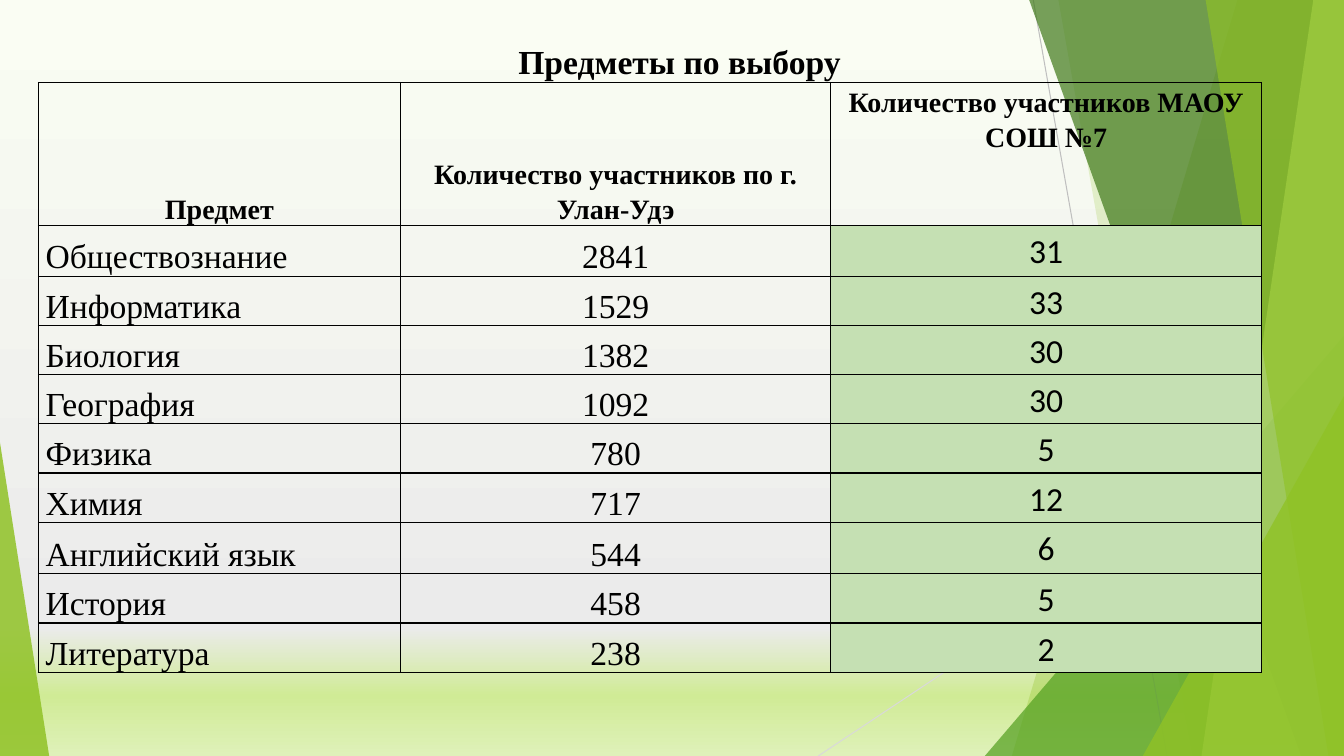
import pptx
import pptx.util
import pptx.dml.color
import pptx.enum.shapes
import pptx.enum.text
import pptx.oxml
import pptx.oxml.ns
import lxml.etree

Cm = pptx.util.Cm
Pt = pptx.util.Pt
RGB = pptx.dml.color.RGBColor.from_string
ALIGN = pptx.enum.text.PP_ALIGN
ANCHOR = pptx.enum.text.MSO_ANCHOR
qn = pptx.oxml.ns.qn

COLORS = {
    "text": "000000", "border": "000000", "school": "C5E0B3",
    "lime": "90C226", "green": "54A021", "forest": "3F7819", "pale": "C0E474",
    "steep line": "BFBFBF", "flat line": "D9D9D9",
}
BACKGROUND_STOPS = [(0, "FAFDF3"), (83, "EBEBEB"), (92, "D0EB96"), (100, "DFF1B9")]
WIDTH, HEIGHT = 33.87, 19.05


def paint(shape, color, opacity):
    shape.shadow.inherit = False
    shape.fill.solid()
    shape.fill.fore_color.rgb = RGB(COLORS[color])
    shape.line.fill.background()
    srgb = shape.fill._xPr.find(".//" + qn("a:srgbClr"))
    lxml.etree.SubElement(srgb, qn("a:alpha"), val=str(opacity * 1000))


def write(paragraph, text, size, font, bold, align):
    paragraph.alignment = align
    paragraph.line_spacing = 1.15
    run = paragraph.add_run()
    run.text = text
    run.font.color.rgb = RGB(COLORS["text"])
    for name, value in {"size": Pt(size), "name": font, "bold": bold}.items():
        setattr(run.font, name, value)


presentation = pptx.Presentation()
presentation.slide_width = Cm(WIDTH)
presentation.slide_height = Cm(HEIGHT)
slide = presentation.slides.add_slide(presentation.slide_layouts[5])
shapes = slide.shapes

background = slide.background.fill
background.gradient()
background.gradient_angle = 270
stop_list = background._xPr.find(".//" + qn("a:gsLst"))
for stop in list(stop_list):
    stop_list.remove(stop)
for position, color in BACKGROUND_STOPS:
    stop = lxml.etree.SubElement(stop_list, qn("a:gs"), pos=str(position * 1000))
    lxml.etree.SubElement(stop, qn("a:srgbClr"), val=color)

for start_x, start_y, end_x, color in [
    (26.04, 0, 29.41, "steep line"),
    (WIDTH, 10.24, 20.62, "flat line"),
]:
    line = shapes.add_connector(
        pptx.enum.shapes.MSO_CONNECTOR.STRAIGHT,
        Cm(start_x), Cm(start_y), Cm(end_x), Cm(HEIGHT))
    line.line.color.rgb = RGB(COLORS[color])
    line.line.width = Pt(0.75)
    lxml.etree.SubElement(line._element.spPr, qn("a:effectLst"))

FACETS = [
    ("band", (31.19, 25.5), "lime", 30),
    ("band", (26.67, 30.05), "lime", 20),
    ("triangle", (24.82, 8.46, 9.05, 10.59, 1), "green", 72),
    ("band", (25.93, 32.79), "forest", 70),
    ("band", (33.1, 30.28), "pale", 70),
    ("band", (30.38, 33.48), "lime", 65),
    ("triangle", (28.8, 9.98, 5.07, 9.07, 1), "lime", 80),
    ("triangle", (0, 11.15, 1.24, 7.9, 0), "lime", 85),
]
for kind, geometry, color, opacity in FACETS:
    if kind == "band":
        top_x, bottom_x = geometry
        builder = shapes.build_freeform(Cm(top_x), Cm(-0.02))
        builder.add_line_segments([
            (Cm(WIDTH), Cm(-0.02)), (Cm(WIDTH), Cm(HEIGHT)), (Cm(bottom_x), Cm(HEIGHT))])
        facet = builder.convert_to_shape()
    else:
        *box, apex = geometry
        facet = shapes.add_shape(
            pptx.enum.shapes.MSO_SHAPE.ISOSCELES_TRIANGLE, *map(Cm, box))
        facet.adjustments[0] = apex
    paint(facet, color, opacity)

title = shapes.title
shapes.element.append(title._element)
for name, value in {"left": 2.95, "top": 0.74, "width": 27.1, "height": 1.37}.items():
    setattr(title, name, Cm(value))
for name, value in {
    "word_wrap": True,
    "auto_size": pptx.enum.text.MSO_AUTO_SIZE.NONE,
    "vertical_anchor": ANCHOR.TOP,
}.items():
    setattr(title.text_frame, name, value)
heading = title.text_frame.paragraphs[0]
write(heading, "Предметы по выбору", 24, "Times New Roman", True, ALIGN.CENTER)
heading._p.get_or_add_pPr().set("indent", str(Cm(1.25)))

ROWS = [
    ("Предмет", "Количество участников по г. Улан-Удэ", "Количество участников МАОУ СОШ №7"),
    ("Обществознание", "2841", "31"),
    ("Информатика", "1529", "33"),
    ("Биология", "1382", "30"),
    ("География", "1092", "30"),
    ("Физика", "780", "5"),
    ("Химия", "717", "12"),
    ("Английский язык", "544", "6"),
    ("История", "458", "5"),
    ("Литература", "238", "2"),
]
COLUMN_WIDTHS = [9.12, 10.85, 10.85]
ROW_HEIGHTS = [3.61, 1.27] + [1.24] * 5 + [1.3] + [1.24] * 2

table = shapes.add_table(
    len(ROWS), len(COLUMN_WIDTHS), Cm(0.97), Cm(2.08),
    Cm(sum(COLUMN_WIDTHS)), Cm(sum(ROW_HEIGHTS))).table
table.first_row = False
table.horz_banding = False
for column, width in zip(table.columns, COLUMN_WIDTHS):
    column.width = Cm(width)

for row_index, (values, height) in enumerate(zip(ROWS, ROW_HEIGHTS)):
    table.rows[row_index].height = Cm(height)
    header = row_index == 0
    for column_index, value in enumerate(values):
        cell = table.cell(row_index, column_index)
        school = column_index == 2
        for name, setting in {
            "margin_left": Cm(0.18), "margin_right": Cm(0.18),
            "margin_top": 0, "margin_bottom": 0,
            "vertical_anchor": ANCHOR.TOP if school else ANCHOR.BOTTOM,
        }.items():
            setattr(cell, name, setting)
        if school and not header:
            cell.fill.solid()
            cell.fill.fore_color.rgb = RGB(COLORS["school"])
        else:
            cell.fill.background()
        write(
            cell.text_frame.paragraphs[0], value, 20 if header else 24,
            "Calibri" if school and not header else "Times New Roman", header,
            ALIGN.LEFT if column_index == 0 and not header else ALIGN.CENTER)
        properties = cell._tc.get_or_add_tcPr()
        for order, side in enumerate(["a:lnL", "a:lnR", "a:lnT", "a:lnB"]):
            border = properties.makeelement(qn(side), {"w": str(Pt(1))})
            solid = lxml.etree.SubElement(border, qn("a:solidFill"))
            lxml.etree.SubElement(solid, qn("a:srgbClr"), val=COLORS["border"])
            properties.insert(order, border)

presentation.save("out.pptx")
